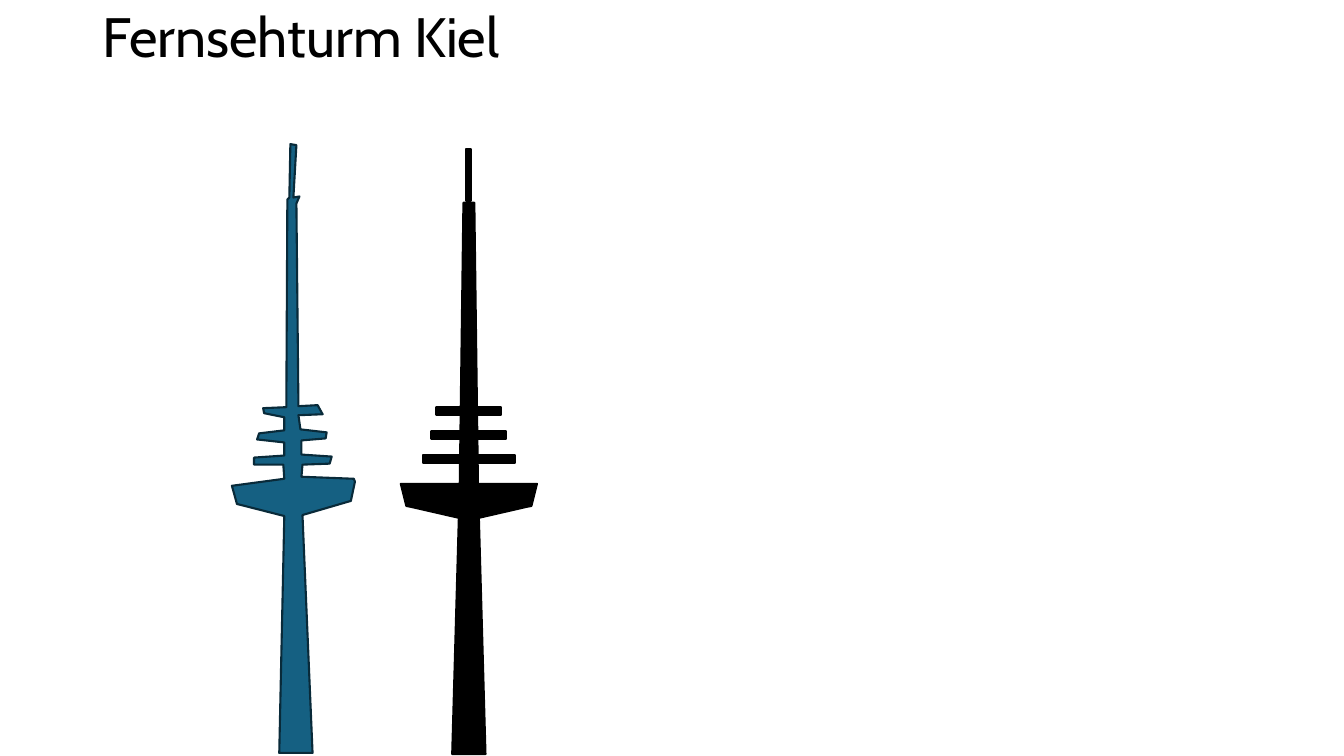
from pptx import Presentation
from pptx.dml.color import RGBColor
from pptx.enum.shapes import MSO_SHAPE as Preset
from pptx.enum.text import MSO_ANCHOR, MSO_AUTO_SIZE, PP_ALIGN
from pptx.util import Inches, Pt

TITLE = "Fernsehturm Kiel"
COLORS = {"ink": "000000", "tower": "156082", "tower_edge": "092A39"}
LINE_WIDTH = 1.5

# Traced silhouette, in hundredths of an inch on the slide
OUTLINE = [
    (277, 747), (282, 512), (235, 500), (230, 482), (282, 475), (281, 461),
    (252, 461), (252, 454), (282, 452), (282, 439), (255, 436), (257, 430),
    (282, 427), (282, 414), (262, 410), (261, 405), (284, 404), (285, 198),
    (287, 196), (288, 143), (294, 144), (291, 196), (297, 195), (294, 202),
    (296, 403), (315, 402), (320, 411), (296, 412), (298, 426), (324, 429),
    (323, 435), (299, 437), (299, 451), (329, 453), (327, 460), (300, 461),
    (299, 473), (351, 475), (352, 478), (348, 497), (300, 511), (310, 747),
]

# Symmetric tower: preset, top, width, height, rotation; all centred on AXIS
AXIS = 4.65
TOWER_PARTS = [
    (Preset.FLOWCHART_MANUAL_OPERATION, 5.13, 0.33, 2.35, 180),
    (Preset.TRAPEZOID, 4.8, 1.35, 0.22, 180),
    (Preset.ISOSCELES_TRIANGLE, 5.02, 1.22, 0.14, 180),
    (Preset.FLOWCHART_MANUAL_OPERATION, 2.01, 0.18, 2.78, 180),
    (Preset.RECTANGLE, 1.48, 0.05, 0.51, 0),
]
PLATFORM_HEIGHT = 0.08
PLATFORMS = [(4.04, 0.64), (4.28, 0.74), (4.51, 0.91)]  # top, width


def paint(shape, fill, line):
    shape.shadow.inherit = False
    shape.fill.solid()
    shape.fill.fore_color.rgb = RGBColor.from_string(COLORS[fill])
    shape.line.color.rgb = RGBColor.from_string(COLORS[line])
    shape.line.width = Pt(LINE_WIDTH)


def write(shape, text, *, font, size, color, spacing):
    frame = shape.text_frame
    frame.auto_size = MSO_AUTO_SIZE.NONE
    frame.word_wrap = True
    frame.vertical_anchor = MSO_ANCHOR.MIDDLE
    paragraph = frame.paragraphs[0]
    paragraph.alignment = PP_ALIGN.LEFT
    paragraph.line_spacing = spacing
    run = paragraph.add_run()
    run.text = text
    run.font.name = font
    run.font.size = Pt(size)
    run.font.color.rgb = RGBColor.from_string(COLORS[color])


def add_traced_tower(slide):
    builder = slide.shapes.build_freeform(*OUTLINE[0], scale=Inches(0.01))
    builder.add_line_segments(OUTLINE[1:], close=True)
    paint(builder.convert_to_shape(), "tower", "tower_edge")


def add_symmetric_tower(slide):
    group = slide.shapes.add_group_shape()
    platforms = [(Preset.RECTANGLE, top, width, PLATFORM_HEIGHT, 0)
                 for top, width in PLATFORMS]
    for preset, top, width, height, rotation in TOWER_PARTS + platforms:
        left = AXIS - width / 2
        shape = group.shapes.add_shape(
            preset, Inches(left), Inches(top), Inches(width), Inches(height))
        shape.rotation = rotation
        paint(shape, "ink", "ink")


def main():
    presentation = Presentation()
    presentation.slide_width = Inches(13.33)
    presentation.slide_height = Inches(7.5)
    slide = presentation.slides.add_slide(
        presentation.slide_layouts.get_by_name("Title Only"))

    title = slide.shapes.title
    title.left, title.top = Inches(0.92), Inches(0.03)
    title.width, title.height = Inches(11.5), Inches(0.72)
    write(title, TITLE, font="Cabin", size=39.6, color="ink", spacing=0.9)

    add_traced_tower(slide)
    add_symmetric_tower(slide)
    presentation.save("out.pptx")


if __name__ == "__main__":
    main()
